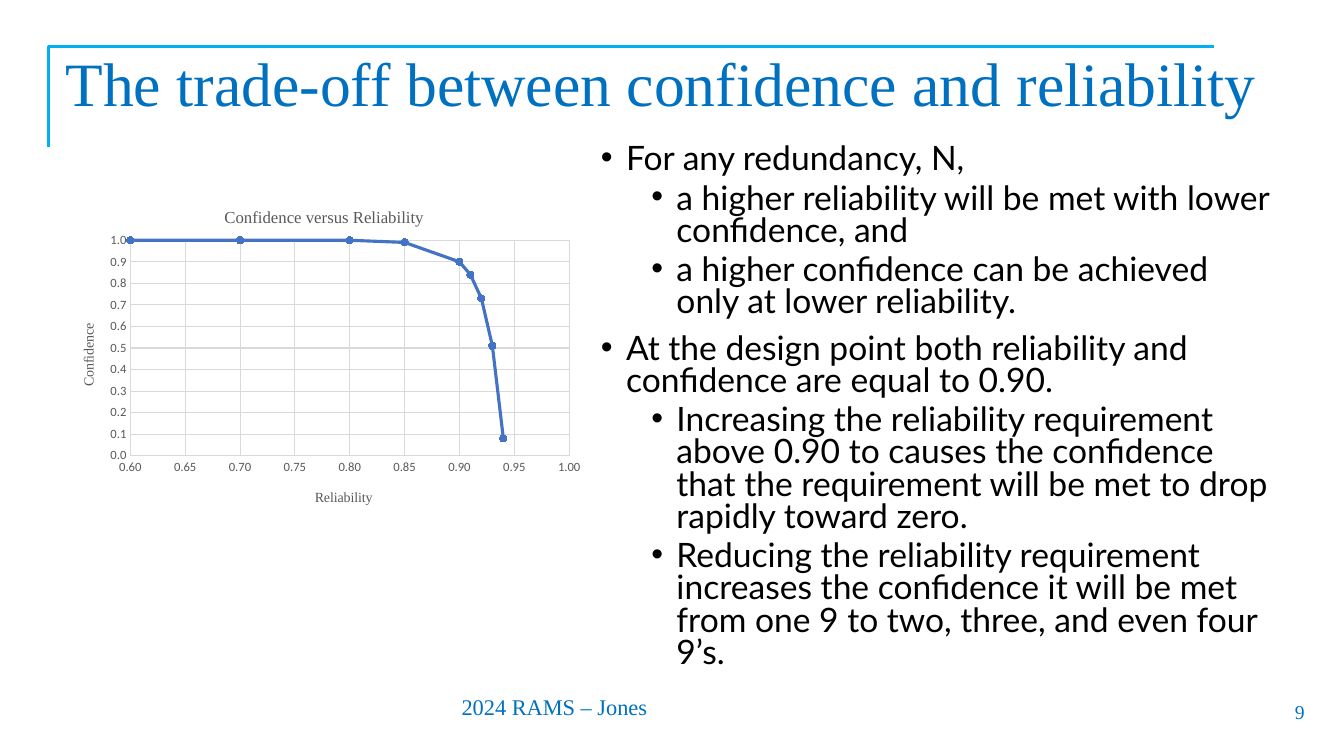
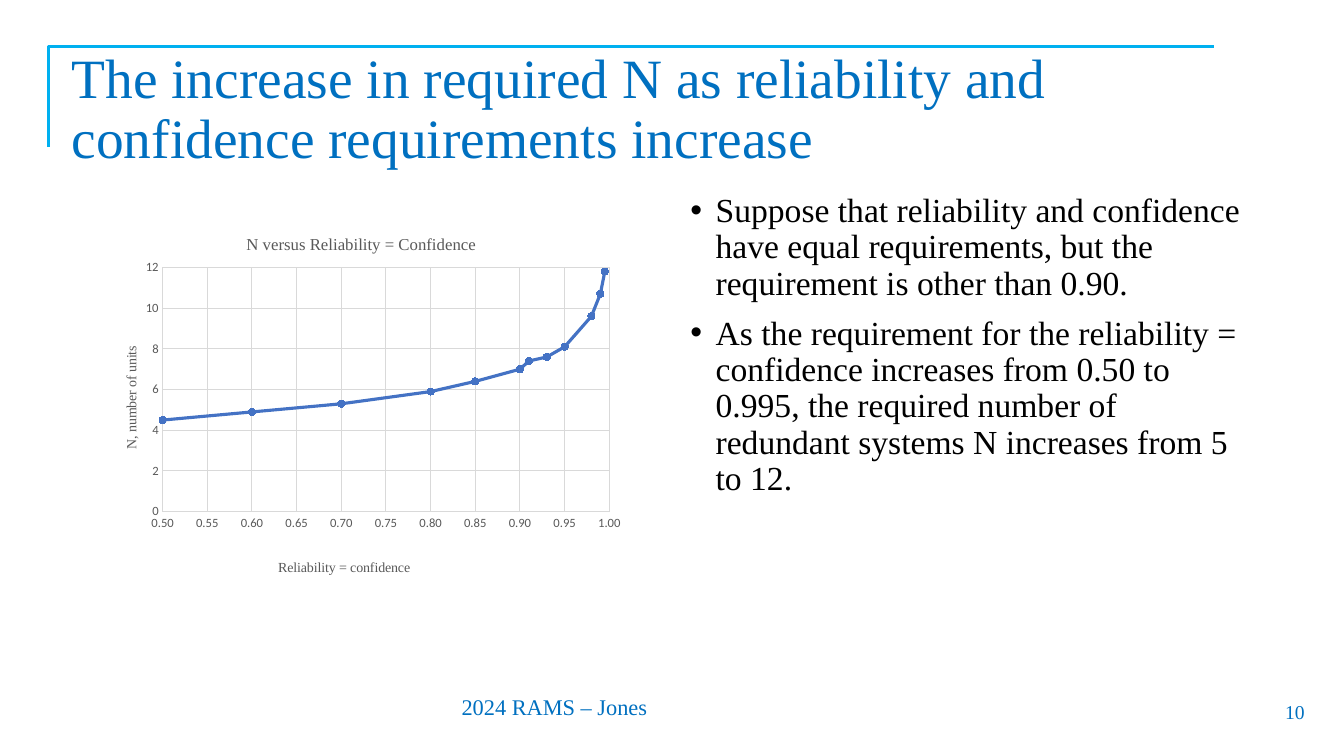
from dataclasses import dataclass

from lxml.etree import SubElement
from pptx import Presentation
from pptx.chart.data import XyChartData
from pptx.dml.color import RGBColor
from pptx.enum.chart import XL_CHART_TYPE, XL_MARKER_STYLE, XL_TICK_MARK
from pptx.enum.text import MSO_ANCHOR, MSO_AUTO_SIZE, PP_ALIGN
from pptx.oxml.ns import qn
from pptx.util import Pt


@dataclass(frozen=True)
class Theme:
    serif: str = "Times New Roman"
    sans: str = "Lato"
    chart_font: str = "Calibri"
    blue: RGBColor = RGBColor.from_string("0070C0")
    bracket: RGBColor = RGBColor.from_string("00B0F0")
    ink: RGBColor = RGBColor.from_string("000000")
    label: RGBColor = RGBColor.from_string("595959")
    grid: RGBColor = RGBColor.from_string("D9D9D9")
    curve: RGBColor = RGBColor.from_string("4472C4")
    body_size: float = 24
    footer_size: float = 16
    number_size: float = 14
    chart_title_size: float = 12
    axis_title_size: float = 10
    tick_size: float = 9


THEME = Theme()
FOOTER = "2024 RAMS – Jones"

SLIDES = [
    {
        "number": 9,
        "title": ("The trade-off between confidence and reliability", 44,
                  (39.6, 31, 881.3, 62)),
        "body": {
            "area": (422, 100, 492.5, 376.5), "font": THEME.sans, "spacing": 0.8,
            "items": [
                (0, "For any redundancy, N,"),
                (1, "a higher reliability will be met with lower confidence, and"),
                (1, "a higher confidence can be achieved only at lower reliability."),
                (0, "At the design point both reliability and confidence are equal to 0.90."),
                (1, "Increasing the reliability requirement above 0.90 to causes the "
                    "confidence that the requirement will be met to drop rapidly toward zero."),
                (1, "Reducing the reliability requirement increases the confidence it will "
                    "be met from one 9 to two, three, and even four 9’s."),
            ],
        },
        "chart": {
            "area": (39.6, 133.2, 382.3, 240.5),
            "plot": (0.14, 0.16, 0.82, 0.64),
            "title": ("Confidence versus Reliability", 0.31, 0.05),
            "x_title": ("Reliability", 0.48, 0.89),
            "y_title": ("Confidence", 0.04, 0.4),
            "x_scale": (0.6, 1, 0.05, "0.00"),
            "y_scale": (0, 1, 0.1, "0.0"),
            "points": [(0.94, 0.08), (0.93, 0.51), (0.92, 0.73), (0.91, 0.84), (0.9, 0.9),
                       (0.85, 0.99), (0.8, 1), (0.7, 1), (0.6, 1)],
        },
    },
    {
        "number": 10,
        "title": ("The increase in required N as reliability and confidence "
                  "requirements increase", 39.6, (44, 33, 839.5, 91.5)),
        "body": {
            "area": (486, 134.6, 408.2, 342.7), "font": THEME.serif, "spacing": 0.9,
            "items": [
                (0, "Suppose that reliability and confidence have equal requirements, "
                    "but the requirement is other than 0.90."),
                (0, "As the requirement for the reliability = confidence increases from "
                    "0.50 to 0.995, the required number of redundant systems N increases "
                    "from 5 to 12."),
            ],
        },
        "chart": {
            "area": (66.2, 152, 384.5, 262),
            "plot": (0.13, 0.15, 0.83, 0.67),
            "title": ("N versus Reliability = Confidence", 0.28, 0.05),
            "x_title": ("Reliability = confidence", 0.34, 0.94),
            "y_title": ("N, number of units", 0.05, 0.36),
            "x_scale": (0.5, 1, 0.05, "0.00"),
            "y_scale": (0, 12, 2, "0"),
            "points": [(0.995, 11.8), (0.99, 10.7), (0.98, 9.6), (0.95, 8.1), (0.93, 7.6),
                       (0.91, 7.4), (0.9, 7), (0.85, 6.4), (0.8, 5.9), (0.7, 5.3),
                       (0.6, 4.9), (0.5, 4.5)],
        },
    },
]


def apply(target, **values):
    for name, value in values.items():
        setattr(target, name, value)


def points(lengths):
    return [Pt(length) for length in lengths]


def style_font(font, name, size, color):
    apply(font, name=name, size=Pt(size), bold=False)
    font.color.rgb = color


def style_line(line, color, width):
    line.color.rgb = color
    line.width = Pt(width)


def place(box, area):
    apply(box, **dict(zip(("left", "top", "width", "height"), points(area))))


def write(paragraph, text, name, size, color):
    span = paragraph.add_run()
    span.text = text
    style_font(span.font, name, size, color)


def add_bracket(page):
    left, top, right, bottom = points((34.5, 33, 867, 105))
    builder = page.shapes.build_freeform(left, bottom)
    builder.add_line_segments([(left, top), (right, top)], close=False)
    bracket = builder.convert_to_shape()
    bracket.shadow.inherit = False
    bracket.fill.background()
    style_line(bracket.line, THEME.bracket, 2)


def add_label(page, text, area, size, **frame_values):
    box = page.shapes.add_textbox(*points(area))
    apply(box.text_frame, **frame_values)
    write(box.text_frame.paragraphs[0], text, THEME.serif, size, THEME.blue)
    return box.text_frame.paragraphs[0]


def add_frame(page, number):
    add_bracket(page)
    add_label(page, FOOTER, (322.6, 491.8, 149, 26.6), THEME.footer_size, word_wrap=False)
    paragraph = add_label(page, str(number), (723, 494, 216, 28.8), THEME.number_size,
                          word_wrap=True, vertical_anchor=MSO_ANCHOR.MIDDLE)
    paragraph.alignment = PP_ALIGN.RIGHT


def fill_title(box, text, size, area):
    place(box, area)
    apply(box.text_frame, word_wrap=True, auto_size=MSO_AUTO_SIZE.NONE,
          vertical_anchor=MSO_ANCHOR.MIDDLE)
    paragraph = box.text_frame.paragraphs[0]
    apply(paragraph, alignment=PP_ALIGN.LEFT, line_spacing=0.9)
    write(paragraph, text, THEME.serif, size, THEME.blue)


def add_bullet(paragraph, level):
    properties = paragraph._p.get_or_add_pPr()
    properties.set("marL", str(Pt(18 + 36 * level)))
    properties.set("indent", str(Pt(-18)))
    SubElement(properties, qn("a:buFont")).set("typeface", "Arial")
    SubElement(properties, qn("a:buChar")).set("char", "•")


def fill_body(box, area, font, spacing, items):
    place(box, area)
    frame = box.text_frame
    apply(frame, word_wrap=True, auto_size=MSO_AUTO_SIZE.NONE,
          vertical_anchor=MSO_ANCHOR.TOP)
    for index, (level, text) in enumerate(items):
        paragraph = frame.add_paragraph() if index else frame.paragraphs[0]
        add_bullet(paragraph, level)
        before = (10, 5)[level] if index else 0
        apply(paragraph, level=level, line_spacing=spacing, space_before=Pt(before))
        write(paragraph, text, font, THEME.body_size, THEME.ink)


def set_layout(parent, position, values):
    for old in parent.findall(qn("c:layout")):
        parent.remove(old)
    layout = SubElement(parent, qn("c:layout"))
    parent.insert(position, layout)
    manual = SubElement(layout, qn("c:manualLayout"))
    for tag, value in values.items():
        SubElement(manual, qn(f"c:{tag}")).set("val", str(value))


def fill_chart_title(title, text, x, y, size, rotation=0):
    write(title.text_frame.paragraphs[0], text, THEME.serif, size, THEME.label)
    title.element.find(".//" + qn("a:bodyPr")).set("rot", str(rotation * 60000))
    set_layout(title.element, 1, {"xMode": "edge", "yMode": "edge", "x": x, "y": y})


def format_axis(axis, scale, title, rotation=0):
    low, high, step, number_format = scale
    apply(axis, minimum_scale=low, maximum_scale=high, major_unit=step,
          has_major_gridlines=True, major_tick_mark=XL_TICK_MARK.NONE,
          minor_tick_mark=XL_TICK_MARK.NONE)
    apply(axis.tick_labels, number_format=number_format, number_format_is_linked=False)
    style_font(axis.tick_labels.font, THEME.chart_font, THEME.tick_size, THEME.label)
    style_line(axis.major_gridlines.format.line, THEME.grid, 0.75)
    fill_chart_title(axis.axis_title, *title, THEME.axis_title_size, rotation)


def format_series(series):
    series.smooth = False
    style_line(series.format.line, THEME.curve, 2.25)
    apply(series.marker, style=XL_MARKER_STYLE.CIRCLE, size=5)
    series.marker.format.fill.solid()
    series.marker.format.fill.fore_color.rgb = THEME.curve
    style_line(series.marker.format.line, THEME.curve, 0.75)


def add_curve_chart(page, area, plot, title, x_title, y_title, x_scale, y_scale, points_xy):
    data = XyChartData()
    values = data.add_series("Series 1")
    for x, y in points_xy:
        values.add_data_point(x, y)
    chart = page.shapes.add_chart(XL_CHART_TYPE.XY_SCATTER_LINES, *points(area), data).chart
    apply(chart, has_legend=False, has_title=True)
    style_font(chart.font, THEME.chart_font, THEME.axis_title_size, THEME.ink)
    fill_chart_title(chart.chart_title, *title, THEME.chart_title_size)
    format_axis(chart.category_axis, x_scale, x_title)
    format_axis(chart.value_axis, y_scale, y_title, -90)
    style_line(chart.category_axis.format.line, THEME.grid, 0.75)
    chart.value_axis.format.line.fill.background()
    chart.plots[0].vary_by_categories = False
    format_series(chart.plots[0].series[0])
    set_layout(chart.element.find(".//" + qn("c:plotArea")), 0,
               {"layoutTarget": "inner", "xMode": "edge", "yMode": "edge",
                **dict(zip("xywh", plot))})


def add_page(deck, number, title, body, chart):
    page = deck.slides.add_slide(deck.slide_layouts[1])
    add_frame(page, number)
    fill_title(page.shapes.title, *title)
    fill_body(page.placeholders[1], **body)
    add_curve_chart(page, *chart.values())


def main():
    deck = Presentation()
    apply(deck, slide_width=Pt(960), slide_height=Pt(540))
    for content in SLIDES:
        add_page(deck, **content)
    deck.save("out.pptx")


if __name__ == "__main__":
    main()
